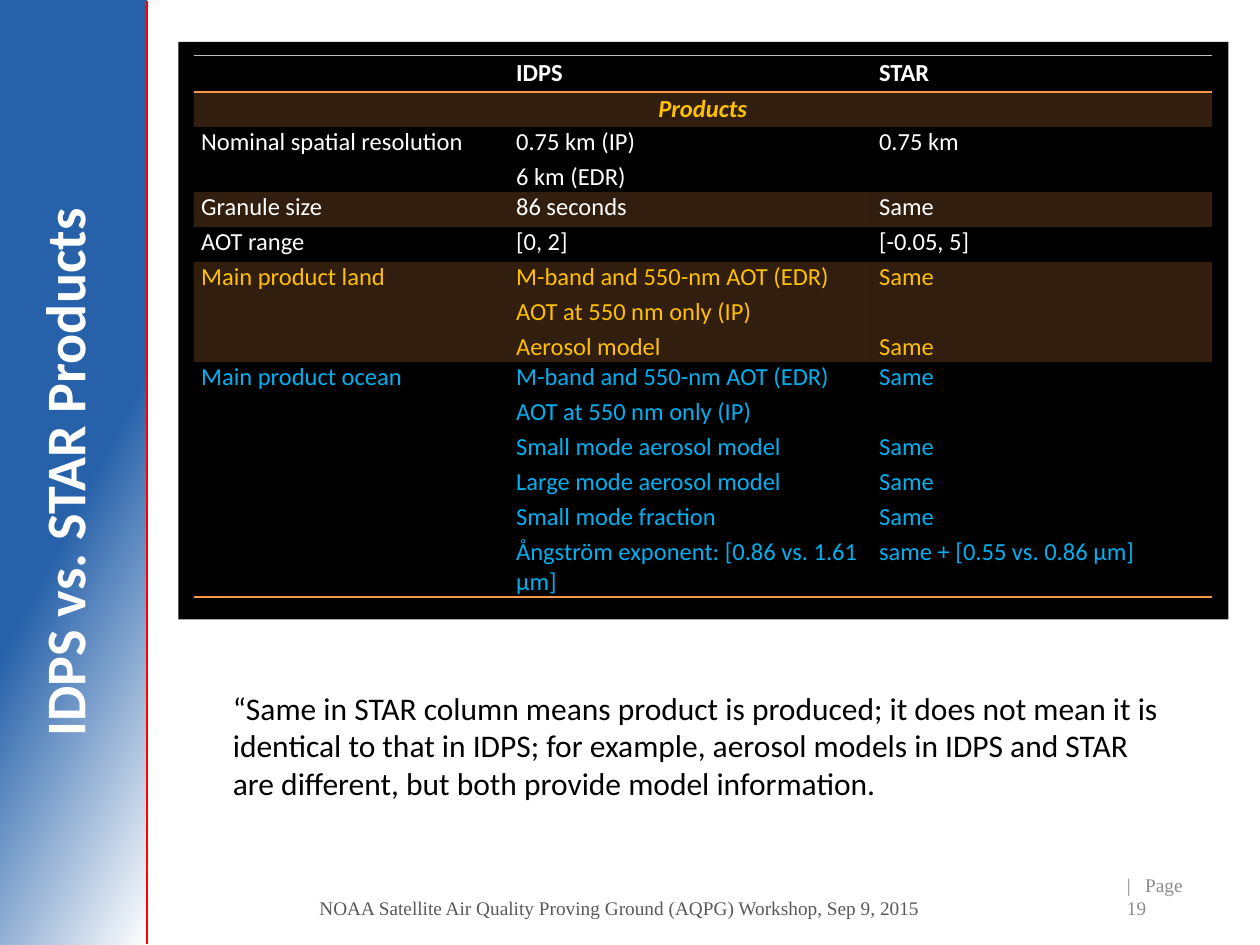
"""Build the slide that compares IDPS and STAR aerosol products."""
import dataclasses
import itertools
import lxml.etree
import pptx
import pptx.dml.color
import pptx.enum.shapes
import pptx.enum.text
import pptx.oxml.ns
import pptx.util

Pt = pptx.util.Pt
RGB = pptx.dml.color.RGBColor.from_string
qn = pptx.oxml.ns.qn
Align = pptx.enum.text.PP_ALIGN
Anchor = pptx.enum.text.MSO_ANCHOR


@dataclasses.dataclass
class Theme:
    sans: str = "Calibri"
    serif: str = "Times New Roman"
    white: str = "FFFFFF"
    black: str = "000000"
    blue: str = "2661AA"
    red: str = "FF0000"
    orange: str = "F79646"
    gold: str = "FFC000"
    sky: str = "00B0F0"
    rule: str = "BFBFBF"
    foot: str = "595959"
    page: str = "8C8C8C"
    title: float = 32
    body: float = 18
    cell: float = 14
    small: float = 11


theme = Theme()


def write(frame, lines, size, face, color, align=Align.LEFT, bold=False, slant=False, after=0):
    frame.word_wrap = True
    frame.text = "\n".join(line for line in lines if line)
    pairs = itertools.pairwise(lines + ["end"])
    gaps = [after if below else 2 * after + size * 1.22 for line, below in pairs if line]
    for para, gap in itertools.zip_longest(frame.paragraphs, gaps, fillvalue=0):
        para.alignment = align
        para.space_after = Pt(gap)
        for run in para.runs:
            font = run.font
            font.size, font.name, font.bold, font.italic = Pt(size), face, bold, slant
            font.color.rgb = RGB(color)
        if not para.runs:
            lxml.etree.SubElement(para._p, qn("a:endParaRPr"), sz=str(size * 100))


def edge(cell, side, color, width):
    line = lxml.etree.SubElement(cell._tc.get_or_add_tcPr(), qn("a:" + side), w=str(Pt(width)))
    fill = lxml.etree.SubElement(line, qn("a:solidFill"))
    lxml.etree.SubElement(fill, qn("a:srgbClr"), val=color)


deck = pptx.Presentation()
deck.slide_width, deck.slide_height = Pt(720), Pt(540)
slide = deck.slides.add_slide(deck.slide_layouts[6])
shapes = slide.shapes
rect = pptx.enum.shapes.MSO_SHAPE.RECTANGLE

band = shapes.add_shape(rect, Pt(-228), Pt(228), Pt(540), Pt(84))
band.rotation = 270
band.shadow.inherit = False
band.line.fill.background()
band.fill.gradient()
band.fill.gradient_angle = 63
for stop, color, place in zip(band.fill.gradient_stops, (theme.white, theme.blue), (0, 0.47)):
    stop.color.rgb = RGB(color)
    stop.position = place

rule = shapes.add_connector(
    pptx.enum.shapes.MSO_CONNECTOR.STRAIGHT, Pt(84), Pt(539.5), Pt(84), Pt(0.5))
rule.line.color.rgb = RGB(theme.red)
rule.line.width = Pt(1.25)
lxml.etree.SubElement(rule._element.spPr, qn("a:effectLst"))

panel = shapes.add_shape(rect, Pt(102), Pt(24), Pt(600), Pt(330))
panel.shadow.inherit = False
panel.line.fill.background()
panel.fill.solid()
panel.fill.fore_color.rgb = RGB(theme.black)

title = shapes.add_textbox(Pt(-168), Pt(240), Pt(408), Pt(60))
title.rotation = 270
title.text_frame.vertical_anchor = Anchor.MIDDLE
write(title.text_frame, ["IDPS vs. STAR Products"], theme.title, theme.sans, theme.white,
      Align.CENTER, bold=True)

rows = [
    (theme.white, [""], ["IDPS"], ["STAR"]),
    (theme.gold, ["Products"], [""], [""]),
    (theme.white, ["Nominal spatial resolution"], ["0.75 km (IP)", "6 km (EDR)"], ["0.75 km"]),
    (theme.white, ["Granule size"], ["86 seconds"], ["Same"]),
    (theme.white, ["AOT range"], ["[0, 2]"], ["[-0.05, 5]"]),
    (theme.gold, ["Main product land"],
     ["M-band and 550-nm AOT (EDR)", "AOT at 550 nm only (IP)", "Aerosol model"],
     ["Same", "", "Same"]),
    (theme.sky, ["Main product ocean"],
     ["M-band and 550-nm AOT (EDR)", "AOT at 550 nm only (IP)", "Small mode aerosol model",
      "Large mode aerosol model", "Small mode fraction",
      "Ångström exponent: [0.86 vs. 1.61 µm]"],
     ["Same", "", "Same", "Same", "Same", "same + [0.55 vs. 0.86 µm]"]),
]
heights = [21, 20, 37.2, 20, 20, 57.2, 134.4]
widths = [180, 207.4, 194.6]
table = shapes.add_table(
    len(rows), 3, Pt(110.6), Pt(31.5), Pt(sum(widths)), Pt(sum(heights))).table
table.first_row = table.horz_banding = False
table._tbl.tblPr.find(qn("a:tableStyleId")).text = "{2D5ABB26-0587-4C30-8999-92F81FD0307C}"
for col, width in zip(table.columns, widths):
    col.width = Pt(width)
table.cell(1, 0).merge(table.cell(1, 2))
for r, (color, *cells) in enumerate(rows):
    table.rows[r].height = Pt(heights[r])
    for c, lines in enumerate(cells):
        cell = table.cell(r, c)
        cell.margin_left = cell.margin_right = Pt(4.32)
        cell.margin_top = cell.margin_bottom = 0
        cell.vertical_anchor = Anchor.MIDDLE if r < 2 else Anchor.TOP
        write(cell.text_frame, lines, theme.cell, theme.sans, color,
              Align.CENTER if r == 1 else Align.LEFT, r < 2, r == 1, 3 if r else 0)
        if r == 0:
            edge(cell, "lnT", theme.rule, 0.5)
        if r in (0, len(rows) - 1):
            edge(cell, "lnB", theme.orange, 1)
        if r % 2:
            cell.fill.solid()
            cell.fill.fore_color.rgb = RGB(theme.orange)
            tint = cell._tc.tcPr.find(qn("a:solidFill") + "/" + qn("a:srgbClr"))
            lxml.etree.SubElement(tint, qn("a:alpha"), val="20000")
        else:
            cell.fill.background()

foot = shapes.add_textbox(Pt(120), Pt(500.4), Pt(468), Pt(28.8))
foot.text_frame.vertical_anchor = Anchor.BOTTOM
write(foot.text_frame, ["NOAA Satellite Air Quality Proving Ground (AQPG) Workshop, Sep 9, 2015"],
      theme.small, theme.serif, theme.foot, Align.CENTER)

page = shapes.add_textbox(Pt(600), Pt(500.4), Pt(102), Pt(28.8))
page.text_frame.vertical_anchor = Anchor.BOTTOM
page.text_frame.margin_left = Pt(44)
write(page.text_frame, ["|\tPage\t19"], theme.small, theme.serif, theme.page)
tabs = lxml.etree.SubElement(page.text_frame.paragraphs[0]._p.get_or_add_pPr(), qn("a:tabLst"))
for place in (10.4, 40.1):
    lxml.etree.SubElement(tabs, qn("a:tab"), pos=str(Pt(place)), algn="l")

note = shapes.add_textbox(Pt(126), Pt(390), Pt(546), Pt(72.7))
write(note.text_frame, [
    "“Same in STAR column means product is produced; it does not mean it is identical to that "
    "in IDPS; for example, aerosol models in IDPS and STAR are different, but both provide "
    "model information."], theme.body, theme.sans, theme.black)

deck.save("out.pptx")
